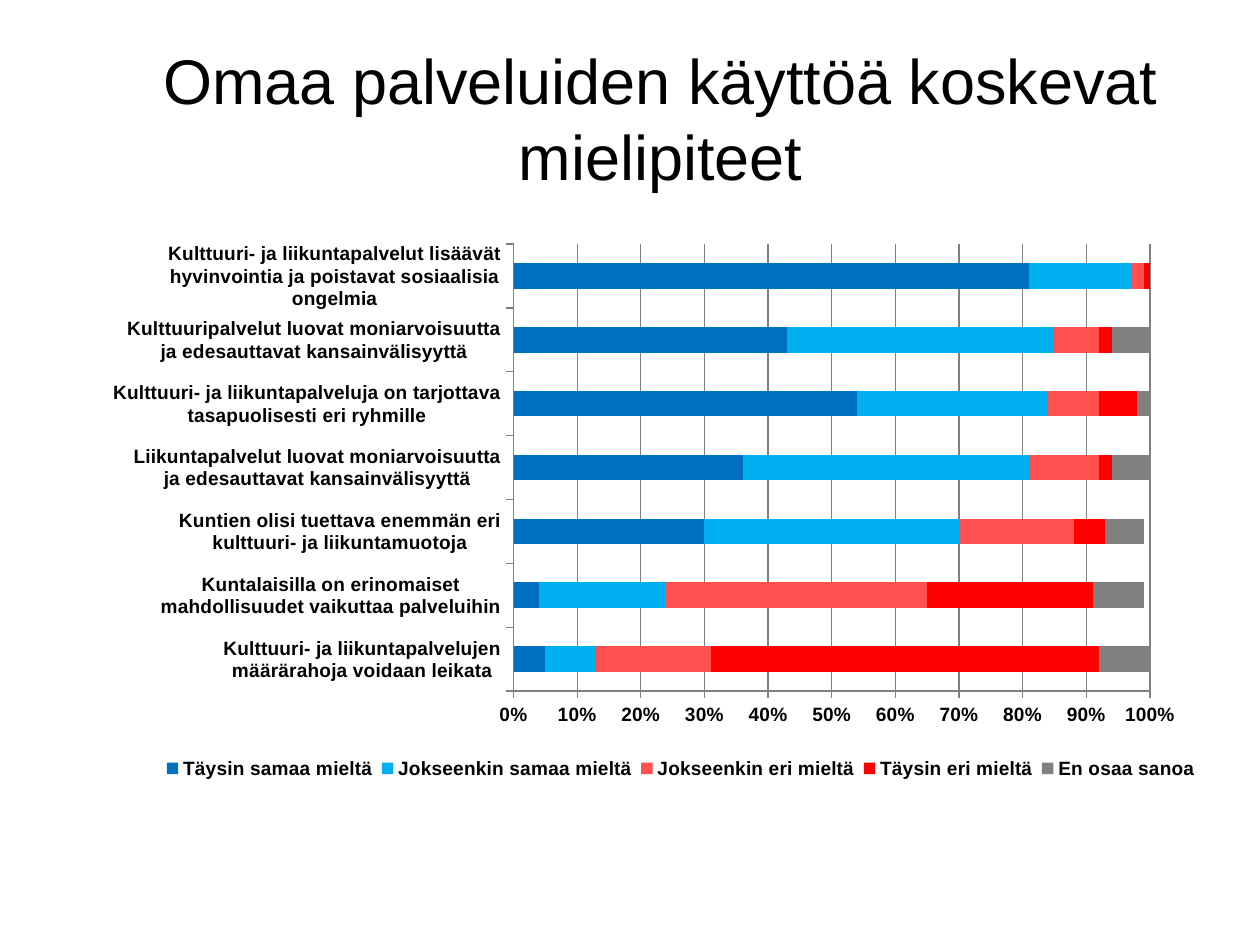
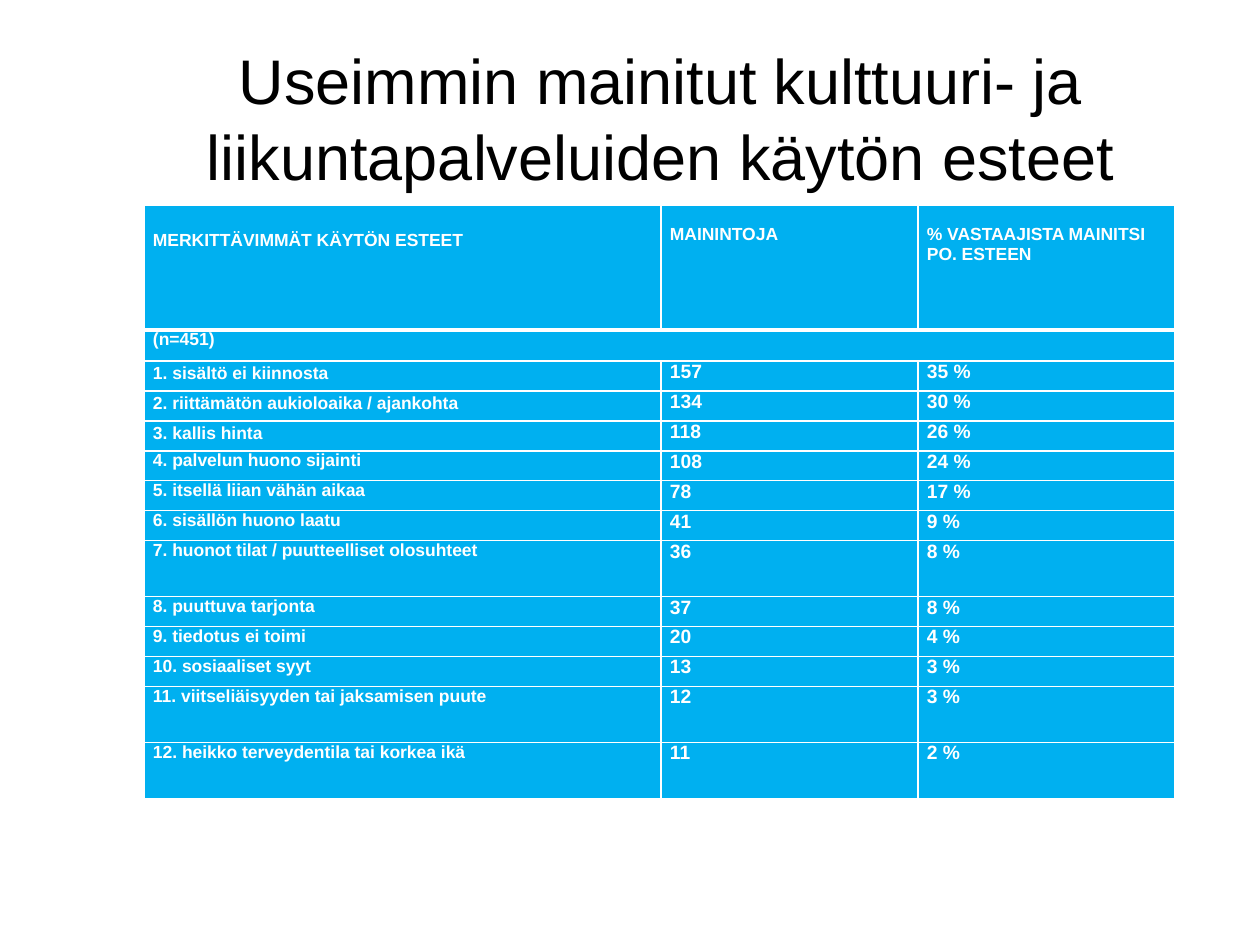
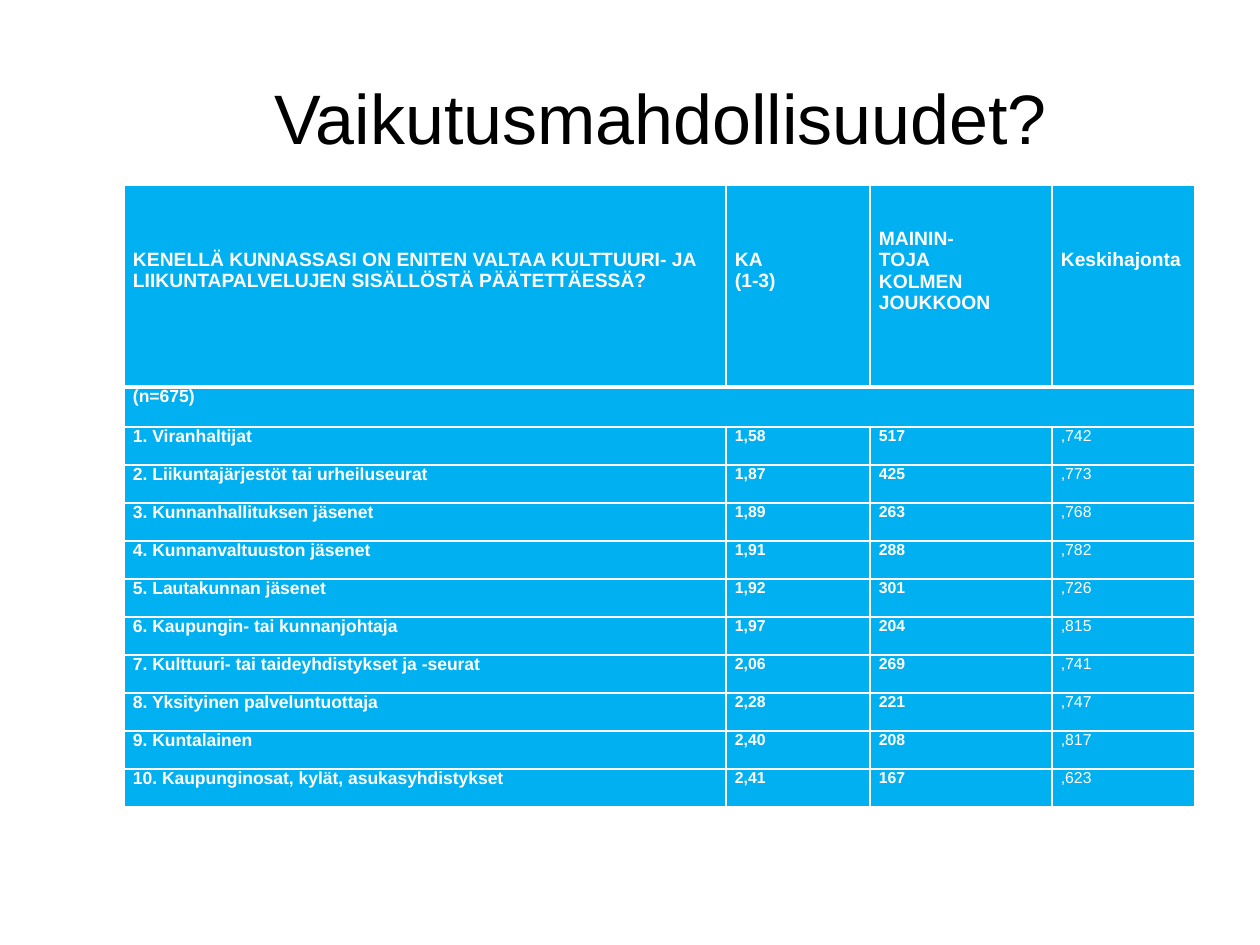
from lxml.etree import SubElement
from pptx import Presentation
from pptx.chart.data import CategoryChartData
from pptx.dml.color import RGBColor
from pptx.enum.chart import XL_CHART_TYPE, XL_LEGEND_POSITION, XL_TICK_MARK
from pptx.enum.text import MSO_ANCHOR, PP_ALIGN
from pptx.oxml.ns import qn
from pptx.util import Emu, Pt

PX = 914400 // 126
FONT = "Arial"
COLORS = {
    "text": "000000", "light": "FFFFFF", "cell": "00B0F0", "grid": "808080",
    "agree": "0070C0", "partly agree": "00B0F0", "partly disagree": "FF5050",
    "disagree": "FF0000", "unsure": "808080",
}
TITLE_BOX = (115, 38, 1091, 158)

# Slide 1: opinions
OPINION_TITLE = "Omaa palveluiden käyttöä koskevat mielipiteet"
CHART_BOX = (113, 227, 1091, 573)
PLOT_AREA = (0.36, 0.03, 0.59, 0.78)
LEGEND_AREA = (0.03, 0.91, 0.97, 0.07)
STATEMENTS = [
    "Kulttuuri- ja liikuntapalvelujen määrärahoja voidaan leikata",
    "Kuntalaisilla on erinomaiset mahdollisuudet vaikuttaa palveluihin",
    "Kuntien olisi tuettava enemmän eri kulttuuri- ja liikuntamuotoja",
    "Liikuntapalvelut luovat moniarvoisuutta ja edesauttavat kansainvälisyyttä",
    "Kulttuuri- ja liikuntapalveluja on tarjottava tasapuolisesti eri ryhmille",
    "Kulttuuripalvelut luovat moniarvoisuutta ja edesauttavat kansainvälisyyttä",
    "Kulttuuri- ja liikuntapalvelut lisäävät hyvinvointia ja poistavat sosiaalisia ongelmia",
]
ANSWERS = [
    ("Täysin samaa mieltä", "agree", (0.05, 0.04, 0.3, 0.36, 0.54, 0.43, 0.81)),
    ("Jokseenkin samaa mieltä", "partly agree", (0.08, 0.2, 0.4, 0.45, 0.3, 0.42, 0.16)),
    ("Jokseenkin eri mieltä", "partly disagree", (0.18, 0.41, 0.18, 0.11, 0.08, 0.07, 0.02)),
    ("Täysin eri mieltä", "disagree", (0.61, 0.26, 0.05, 0.02, 0.06, 0.02, 0.01)),
    ("En osaa sanoa", "unsure", (0.09, 0.08, 0.06, 0.07, 0.03, 0.06, 0.01)),
]

# Slides 2 and 3: tables; column styles are (size, bold)
BARRIERS = {
    "title": "Useimmin mainitut kulttuuri- ja liikuntapalveluiden käytön esteet",
    "title size": 36,
    "corner": (144, 205),
    "widths": [517, 257, 257],
    "heights": [125, 31] + [30] * 6 + [56] + [30] * 3 + [56] * 2,
    "header size": 10,
    "header tops": [23, 20, 20],
    "styles": [(10, True), (11, True), (11, True)],
    "loose rows": [0, 2, 3, 4],
    "rows": [
        ("MERKITTÄVIMMÄT KÄYTÖN ESTEET", "MAININTOJA", "% VASTAAJISTA MAINITSI PO. ESTEEN"),
        ("(n=451)",),
        ("1. sisältö ei kiinnosta", "157", "35 %"),
        ("2. riittämätön aukioloaika / ajankohta", "134", "30 %"),
        ("3. kallis hinta", "118", "26 %"),
        ("4. palvelun huono sijainti", "108", "24 %"),
        ("5. itsellä liian vähän aikaa", "78", "17 %"),
        ("6. sisällön huono laatu", "41", "9 %"),
        ("7. huonot tilat / puutteelliset olosuhteet", "36", "8 %"),
        ("8. puuttuva tarjonta", "37", "8 %"),
        ("9. tiedotus ei toimi", "20", "4 %"),
        ("10. sosiaaliset syyt", "13", "3 %"),
        ("11. viitseliäisyyden tai jaksamisen puute", "12", "3 %"),
        ("12. heikko terveydentila tai korkea ikä", "11", "2 %"),
    ],
}
INFLUENCE = {
    "title": "Vaikutusmahdollisuudet?",
    "title size": 40,
    "corner": (124, 185),
    "widths": [602, 144, 182, 143],
    "heights": [202, 40] + [38] * 10,
    "header size": 11,
    "header tops": [64, 64, 43, 64],
    "styles": [(10, True), (9, True), (9, True), (9, False)],
    "loose rows": [],
    "rows": [
        ("KENELLÄ KUNNASSASI ON ENITEN VALTAA KULTTUURI- JA LIIKUNTAPALVELUJEN "
         "SISÄLLÖSTÄ PÄÄTETTÄESSÄ?",
         "KA\v(1-3)", "MAININ-\vTOJA\vKOLMEN\vJOUKKOON", "Keskihajonta"),
        ("(n=675)",),
        ("1. Viranhaltijat", "1,58", "517", ",742"),
        ("2. Liikuntajärjestöt tai urheiluseurat", "1,87", "425", ",773"),
        ("3. Kunnanhallituksen jäsenet", "1,89", "263", ",768"),
        ("4. Kunnanvaltuuston jäsenet", "1,91", "288", ",782"),
        ("5. Lautakunnan jäsenet", "1,92", "301", ",726"),
        ("6. Kaupungin- tai kunnanjohtaja", "1,97", "204", ",815"),
        ("7. Kulttuuri- tai taideyhdistykset ja -seurat", "2,06", "269", ",741"),
        ("8. Yksityinen palveluntuottaja", "2,28", "221", ",747"),
        ("9. Kuntalainen", "2,40", "208", ",817"),
        ("10. Kaupunginosat, kylät, asukasyhdistykset", "2,41", "167", ",623"),
    ],
}


def px(*lengths):
    return [Emu(length * PX) for length in lengths]


def color(name):
    return RGBColor.from_string(COLORS[name])


def style_font(font, size, name="text", bold=False):
    font.name, font.size, font.bold = FONT, Pt(size), bold
    font.color.rgb = color(name)


def add_page(deck, title, size):
    page = deck.slides.add_slide(deck.slide_layouts[6])
    frame = page.shapes.add_textbox(*px(*TITLE_BOX)).text_frame
    frame.word_wrap = True
    frame.vertical_anchor = MSO_ANCHOR.MIDDLE
    frame.text = title
    para = frame.paragraphs[0]
    para.alignment = PP_ALIGN.CENTER
    style_font(para.runs[0].font, size)
    return page


# Chart
def set_layout(element, position, area, inner=False):
    for old in element.findall(qn("c:layout")):
        element.remove(old)
    layout = SubElement(element, qn("c:layout"))
    element.insert(position, layout)
    manual = SubElement(layout, qn("c:manualLayout"))
    settings = [("layoutTarget", "inner")] if inner else []
    settings += [("xMode", "edge"), ("yMode", "edge"), *zip("xywh", area)]
    for tag, value in settings:
        SubElement(manual, qn("c:" + tag)).set("val", str(value))


def style_line(line):
    line.color.rgb = color("grid")
    line.width = Pt(0.75)


def add_opinion_chart(page):
    data = CategoryChartData(number_format="0%")
    data.categories = STATEMENTS
    for name, _, values in ANSWERS:
        data.add_series(name, values)
    chart = page.shapes.add_chart(XL_CHART_TYPE.BAR_STACKED, *px(*CHART_BOX), data).chart
    chart.has_title = False
    style_font(chart.font, 10)

    plot = chart.plots[0]
    plot.gap_width, plot.overlap, plot.vary_by_categories = 150, 100, False
    for series, (_, tone, _) in zip(plot.series, ANSWERS):
        series.format.fill.solid()
        series.format.fill.fore_color.rgb = color(tone)
        series.invert_if_negative = False

    for axis in (chart.category_axis, chart.value_axis):
        axis.major_tick_mark = XL_TICK_MARK.OUTSIDE
        style_font(axis.tick_labels.font, 11, bold=True)
        style_line(axis.format.line)
    scale = chart.value_axis
    scale.minimum_scale, scale.maximum_scale, scale.major_unit = 0, 1, 0.1
    scale.tick_labels.number_format = "0%"
    scale.tick_labels.number_format_is_linked = False
    scale.has_major_gridlines = True
    style_line(scale.major_gridlines.format.line)

    chart.has_legend = True
    legend = chart.legend
    legend.position = XL_LEGEND_POSITION.BOTTOM
    legend.include_in_layout = False
    style_font(legend.font, 11, bold=True)
    set_layout(legend._element, 1, LEGEND_AREA)
    set_layout(chart._chartSpace.chart.plotArea, 0, PLOT_AREA, inner=True)


# Tables
def set_borders(cell, bottom):
    properties = cell._tc.get_or_add_tcPr()
    for position, side in enumerate(("lnL", "lnR", "lnT", "lnB")):
        width = bottom if side == "lnB" else 1
        line = SubElement(properties, qn("a:" + side), w=str(Pt(width)))
        properties.insert(position, line)
        fill = SubElement(line, qn("a:solidFill"))
        SubElement(fill, qn("a:srgbClr"), val=COLORS["light"])


def add_table(page, content):
    widths, heights, rows = content["widths"], content["heights"], content["rows"]
    box = px(*content["corner"], sum(widths), sum(heights))
    table = page.shapes.add_table(len(rows), len(widths), *box).table
    for column, width in zip(table.columns, px(*widths)):
        column.width = width
    for row, height in zip(table.rows, px(*heights)):
        row.height = height
    table.cell(1, 0).merge(table.cell(1, len(widths) - 1))

    for r, texts in enumerate(rows):
        for c in range(len(widths)):
            cell = table.cell(r, c)
            cell.fill.solid()
            cell.fill.fore_color.rgb = color("cell")
            cell.margin_left = cell.margin_right = px(9)[0]
            cell.margin_top = px(content["header tops"][c] if r == 0 else 0)[0]
            cell.margin_bottom = 0
            set_borders(cell, bottom=3 if r == 0 else 1)
            if c >= len(texts):
                continue
            cell.text_frame.text = texts[c]
            para = cell.text_frame.paragraphs[0]
            if c == 0 and r in content["loose rows"]:
                para.line_spacing = 1.15
            size, bold = (content["header size"], True) if r == 0 else content["styles"][c]
            for span in para.runs:
                style_font(span.font, size, "light", bold)


def main():
    deck = Presentation()
    deck.slide_width, deck.slide_height = px(1260, 945)
    add_opinion_chart(add_page(deck, OPINION_TITLE, 36))
    for content in (BARRIERS, INFLUENCE):
        add_table(add_page(deck, content["title"], content["title size"]), content)
    deck.save("out.pptx")


if __name__ == "__main__":
    main()
